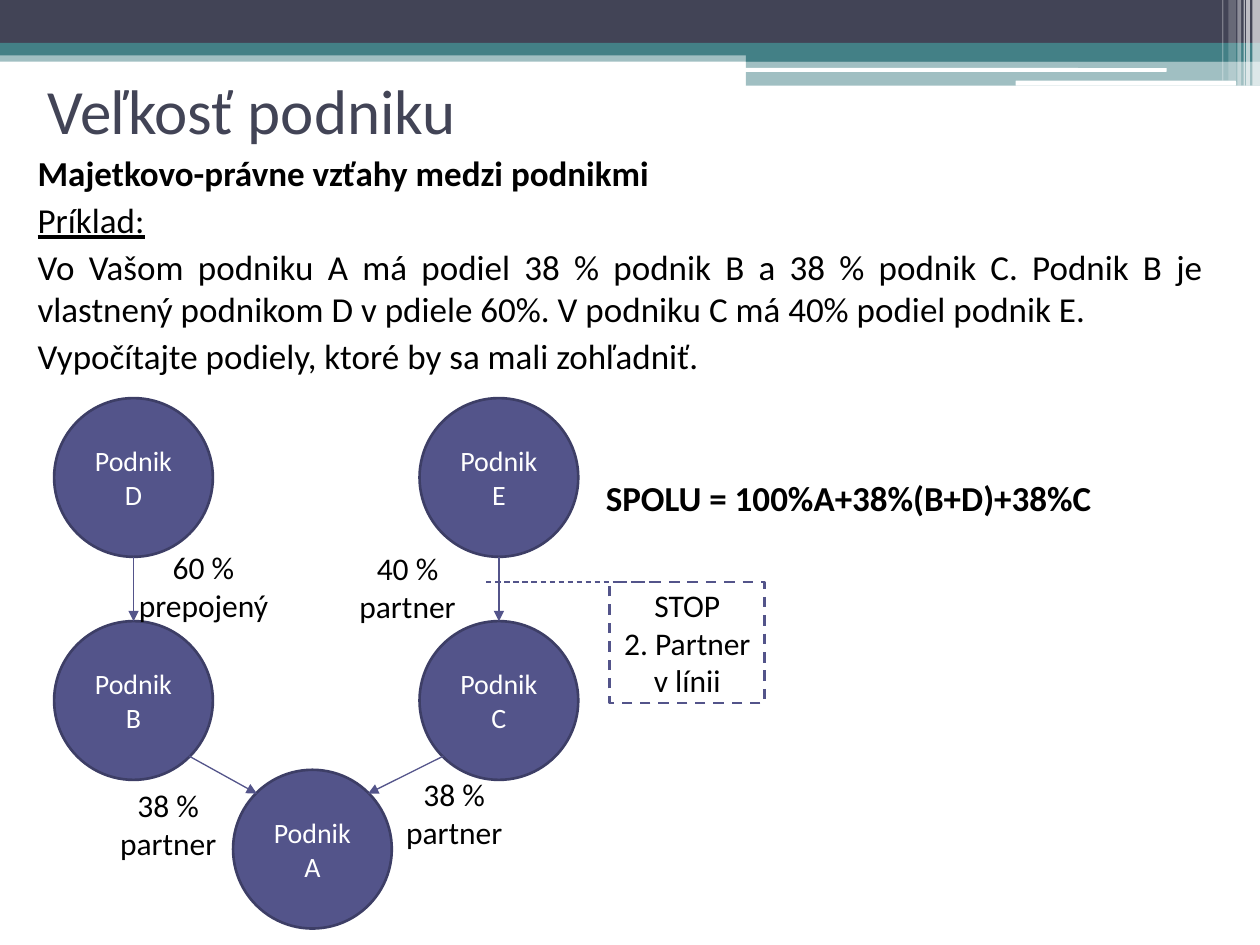
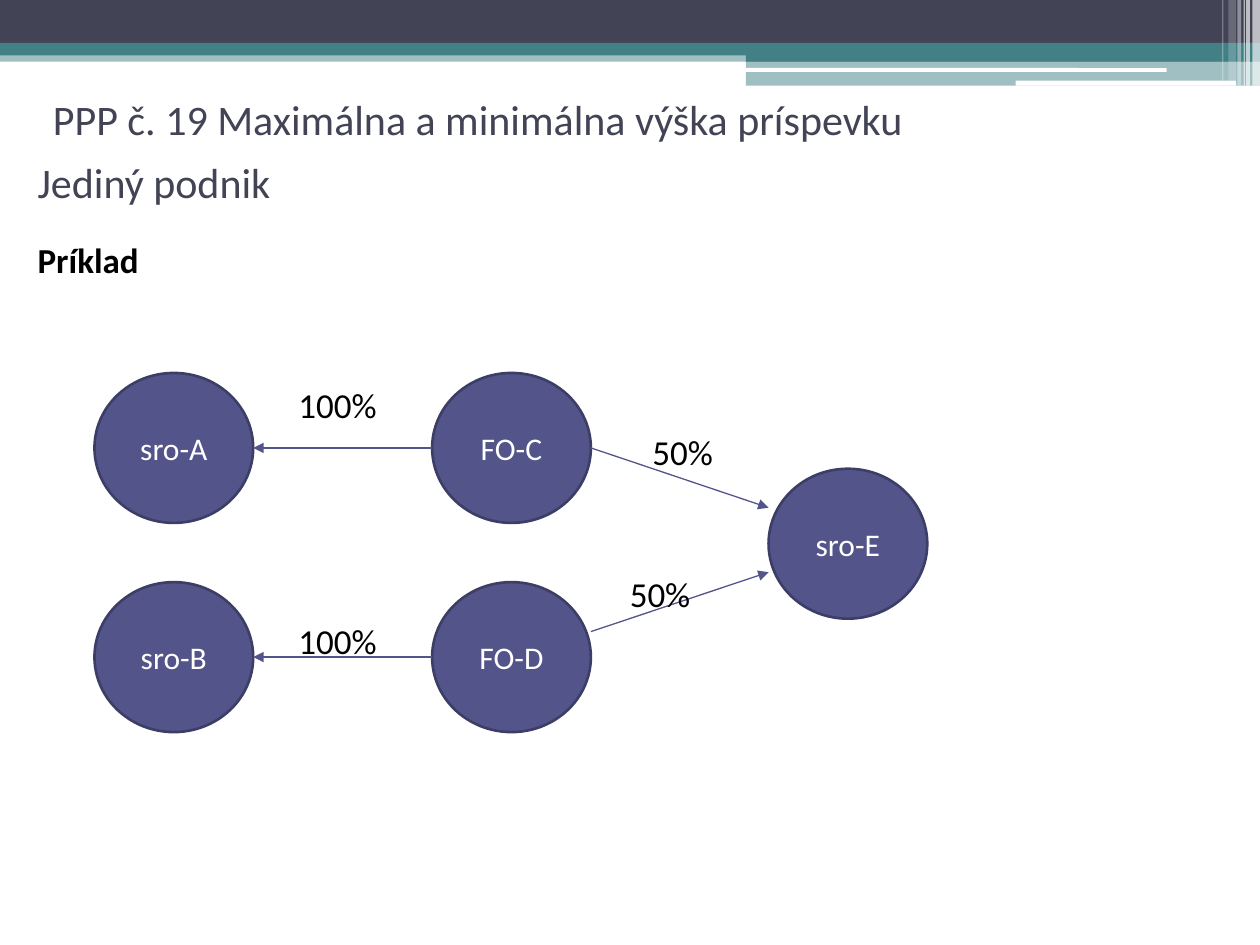
"""Build two slides on ownership links between companies."""
from lxml import etree
from pptx import Presentation
from pptx import util as u
from pptx.dml.color import RGBColor
from pptx.enum import dml, shapes, text
from pptx.oxml.ns import qn

FONT = "Calibri"
NAVY, TEAL, WHITE, BLACK = "424456", "438086", "FFFFFF", "000000"
VIOLET, EDGE = "53548A", "3D3E66"
LEFT, CENTER, JUSTIFY = (text.PP_ALIGN.LEFT, text.PP_ALIGN.CENTER,
                         text.PP_ALIGN.JUSTIFY)
TOP, MIDDLE = text.MSO_ANCHOR.TOP, text.MSO_ANCHOR.MIDDLE
RECT, ROUND, OVAL = (shapes.MSO_SHAPE.RECTANGLE,
                     shapes.MSO_SHAPE.ROUNDED_RECTANGLE,
                     shapes.MSO_SHAPE.OVAL)

# left, top, width, height, colour, opacity in percent, preset shape
BANDS = [
    (0, 0.4, 10, 0.09, TEAL, 50, RECT),
    (0, 0, 10, 0.34, NAVY, 100, RECT),
    (0, 0.34, 10, 0.1, TEAL, 100, RECT),
    (5.92, 0.39, 4.08, 0.1, TEAL, 100, RECT),
    (5.92, 0.48, 4.08, 0.2, TEAL, 50, RECT),
    (5.91, 0.54, 3.35, 0.03, WHITE, 100, ROUND),
    (8.06, 0.64, 1.75, 0.04, WHITE, 100, ROUND),
] + [(left, 0, width, height, WHITE, opacity, RECT)
     for left, width, height, opacity in [
         (9.94, 0.06, 0.68, 65), (9.89, 0.03, 0.68, 65),
         (9.87, 0.01, 0.68, 60), (9.82, 0.03, 0.68, 40),
         (9.75, 0.06, 0.64, 20), (9.7, 0.01, 0.64, 30)]]

# Points on a circle, as fractions of its width and height
SITES = {"top": (0.5, 0), "bottom": (0.5, 1), "left": (0, 0.5),
         "right": (1, 0.5), "top left": (0.15, 0.15),
         "top right": (0.85, 0.15), "bottom left": (0.15, 0.85),
         "bottom right": (0.85, 0.85), "right low": (1, 0.33),
         "edge high": (0, 0.26), "edge low": (0, 0.69)}

SIZE_SLIDE = {
    "title": ("Veľkosť podniku", (0.28, 0.52, 9, 0.69), 36, LEFT),
    "body": (0.2, 1.15, 9.45, 2),
    "paragraphs": [
        ("Majetkovo-právne vzťahy medzi podnikmi", {"bold": True}),
        ("Príklad:", {"underline": True}),
        ("Vo Vašom podniku A má podiel 38 % podnik B a 38 % podnik C. "
         "Podnik B je vlastnený podnikom D v pdiele 60%. "
         "V podniku C má 40% podiel podnik E.", {"align": JUSTIFY}),
        ("Vypočítajte podiely, ktoré by sa mali zohľadniť.", {}),
    ],
    "circle": (1.26, 1.26, 16),
    "circles": {"Podnik A": (1.85, 6.11), "Podnik B": (0.43, 4.93),
                "Podnik C": (3.33, 4.93), "Podnik D": (0.43, 3.16),
                "Podnik E": (3.33, 3.16)},
    "arrows": [("Podnik B", "bottom right", "Podnik A", "top left"),
               ("Podnik C", "bottom left", "Podnik A", "top right"),
               ("Podnik D", "bottom", "Podnik B", "top"),
               ("Podnik E", "bottom", "Podnik C", "top")],
    "label style": {"size": 18, "align": CENTER},
    "labels": [(["38 %", "partner"], (2.99, 6.15, 1.23, 0.6)),
               (["38 %", "partner"], (0.64, 6.27, 1.39, 0.54)),
               (["60 %", "prepojený"], (0.92, 4.38, 1.39, 0.54)),
               (["40 %", "partner"], (2.62, 4.36, 1.23, 0.6))],
}
TOTAL = ("SPOLU = 100%A+38%(B+D)+38%C", (4.71, 3.73, 4.9, 0.45))
STOP = (["STOP", "2. Partner v línii"], (4.84, 4.62, 1.23, 0.96))
STOP_LINE = ((3.86, 4.62), (5.24, 4.62))

SINGLE_SLIDE = {
    "title": ("PPP č. 19 Maximálna a minimálna výška príspevku",
              (0.32, 0.6, 9.49, 0.69), 24, JUSTIFY),
    "body": (0.2, 1.19, 9.45, 1.1),
    "paragraphs": [("Jediný podnik", {"size": 24, "color": NAVY}),
                   ("Príklad", {"bold": True, "before": 18})],
    "circle": (1.26, 1.19, 18),
    "circles": {"sro-A": (0.75, 2.96), "sro-B": (0.75, 4.62),
                "FO-C": (3.43, 2.96), "FO-D": (3.43, 4.62),
                "sro-E": (6.1, 3.72)},
    "arrows": [("FO-C", "left", "sro-A", "right"),
               ("FO-D", "left", "sro-B", "right"),
               ("FO-D", "right low", "sro-E", "edge low"),
               ("FO-C", "right", "sro-E", "edge high")],
    "label style": {"size": 20},
    "labels": [(["100%"], (2.27, 3.01, 0.85, 0.4)),
               (["50%"], (5.08, 3.38, 0.85, 0.4)),
               (["50%"], (4.9, 4.51, 0.85, 0.4)),
               (["100%"], (2.27, 4.88, 0.85, 0.4))],
}


def rgb(color):
    return RGBColor.from_string(color)


def inches(values):
    return [u.Inches(value) for value in values]


def style(para, size=20, color=BLACK, align=LEFT, bold=False,
          underline=False, before=0):
    para.alignment = align
    para.space_before = u.Pt(before)
    font = para.font
    font.name, font.size, font.bold = FONT, u.Pt(size), bold
    font.underline = underline
    font.color.rgb = rgb(color)


def write(box, paragraphs, anchor=MIDDLE, **shared):
    frame = box.text_frame
    frame.word_wrap = True
    frame.vertical_anchor = anchor
    for index, (words, own) in enumerate(paragraphs):
        para = frame.add_paragraph() if index else frame.paragraphs[0]
        para.text = words
        style(para, **{**shared, **own})


def add_text(page, paragraphs, place, **options):
    write(page.shapes.add_textbox(*inches(place)), paragraphs, **options)


def add_box(page, preset, place, fill=None, edge=None):
    box = page.shapes.add_shape(preset, *inches(place))
    box.shadow.inherit = False
    if fill:
        box.fill.solid()
        box.fill.fore_color.rgb = rgb(fill)
    else:
        box.fill.background()
    if edge:
        box.line.color.rgb = rgb(edge)
        box.line.width = u.Pt(1.5)
    else:
        box.line.fill.background()
    return box


def add_line(page, start, end, arrow=True):
    line = page.shapes.add_connector(shapes.MSO_CONNECTOR.STRAIGHT,
                                     *inches(start + end))
    line.line.color.rgb = rgb(VIOLET)
    line.line.width = u.Pt(0.75)
    if arrow:
        stroke = line.element.spPr.find(qn("a:ln"))
        etree.SubElement(stroke, qn("a:tailEnd"), type="triangle")
    else:
        line.line.dash_style = dml.MSO_LINE.DASH
    etree.SubElement(line.element.spPr, qn("a:effectLst"))


def add_bands(page):
    """Draw the header bands and hand them to the page's layout."""
    tree = page.slide_layout.shapes.element
    for number, (*place, color, opacity, preset) in enumerate(BANDS, 101):
        band = add_box(page, preset, place, color)
        if opacity < 100:
            tint = next(band.element.iter(qn("a:srgbClr")))
            etree.SubElement(tint, qn("a:alpha"), val=str(opacity * 1000))
        band.element.nvSpPr.cNvPr.id = number
        tree.append(band.element)


def add_page(deck, content):
    page = deck.slides.add_slide(deck.slide_layouts.get_by_name("Title Only"))
    words, place, size, align = content["title"]
    title = page.shapes.title
    title.left, title.top, title.width, title.height = inches(place)
    write(title, [(words, {})], size=size, color=NAVY, align=align)
    add_text(page, content["paragraphs"], content["body"], anchor=TOP,
             **{"before": 3})

    width, height, size = content["circle"]
    for name, corner in content["circles"].items():
        circle = add_box(page, OVAL, (*corner, width, height), VIOLET, EDGE)
        write(circle, [(name, {})], size=size, color=WHITE, align=CENTER)

    def point(name, site):
        left, top = content["circles"][name]
        across, down = SITES[site]
        return left + across * width, top + down * height

    for owner, exit_site, owned, entry_site in content["arrows"]:
        add_line(page, point(owner, exit_site), point(owned, entry_site))
    for lines, place in content["labels"]:
        add_text(page, [(line, {}) for line in lines], place,
                 **content["label style"])
    return page


def main():
    deck = Presentation()
    deck.slide_width, deck.slide_height = inches((10, 7.5))
    page = add_page(deck, SIZE_SLIDE)
    add_bands(page)
    words, place = TOTAL
    add_text(page, [(words, {})], place, anchor=TOP, bold=True, before=3)
    add_line(page, *STOP_LINE, arrow=False)
    lines, place = STOP
    stop = add_box(page, RECT, place, edge=VIOLET)
    stop.line.dash_style = dml.MSO_LINE.DASH
    write(stop, [(line, {}) for line in lines], size=18, align=CENTER)
    add_page(deck, SINGLE_SLIDE)
    deck.save("out.pptx")


if __name__ == "__main__":
    main()
